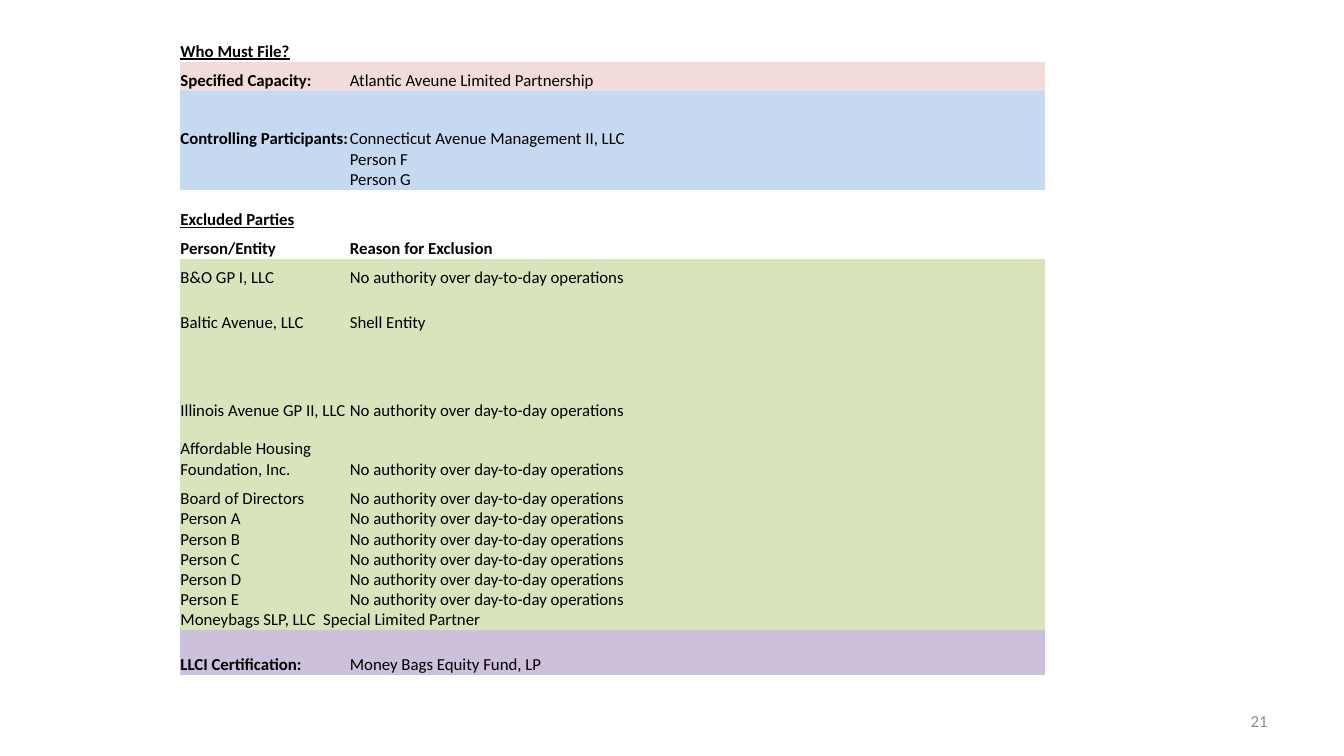
from lxml import etree
from pptx import Presentation
from pptx.dml.color import RGBColor
from pptx.enum.text import MSO_ANCHOR, PP_ALIGN
from pptx.util import Inches, Pt

BOTTOM = MSO_ANCHOR.BOTTOM
MIDDLE = MSO_ANCHOR.MIDDLE
RIGHT = PP_ALIGN.RIGHT
PLAIN_TABLE = "{2D5ABB26-0587-4C30-8999-92F81FD0307C}"

PINK, BLUE, GREEN, PURPLE = "F2DCDB", "C5D9F1", "D8E4BC", "CCC0DA"
NO_AUTHORITY = "No authority over day-to-day operations"
LINE, SINGLE, TALL, DOUBLE = 0.2, 0.29, 0.44, 0.58
HEADING, LABEL, NORMAL = "heading", "label", "normal"


def color(value):
    return RGBColor.from_string(value)


class FilingPage:
    """Holds the text style and the current slide, and draws its elements."""

    font = "Calibri"
    size = Pt(12)

    def __init__(self, deck):
        self.page = deck.slides.add_slide(deck.slide_layouts[6])

    def style(self, para, ink="000000", bold=False, underline=False):
        para.font.name = self.font
        para.font.size = self.size
        para.font.color.rgb = color(ink)
        para.font.bold = bold
        para.font.underline = underline

    def text(self, words, left, top, width, height, ink):
        box = self.page.shapes.add_textbox(
            Inches(left), Inches(top), Inches(width), Inches(height))
        box.text_frame.word_wrap = True
        box.text_frame.vertical_anchor = MIDDLE
        para = box.text_frame.paragraphs[0]
        para.text = words
        para.alignment = RIGHT
        self.style(para, ink)

    def cell(self, cell, words, fill, bold=False, underline=False):
        cell.margin_left = cell.margin_right = 0
        cell.margin_top = cell.margin_bottom = 0
        cell.vertical_anchor = BOTTOM
        if fill:
            cell.fill.solid()
            cell.fill.fore_color.rgb = color(fill)
        else:
            cell.fill.background()
        para = cell.text_frame.paragraphs[0]
        if words:
            para.text = words
        else:
            para._p.get_or_add_endParaRPr().set("sz", str(int(self.size.pt * 100)))
        self.style(para, bold=bold, underline=underline)

    def table(self, rows, left, top, widths):
        frame = self.page.shapes.add_table(
            len(rows), len(widths), Inches(left), Inches(top),
            Inches(sum(widths)), Inches(sum(row[0] for row in rows)))
        table = frame.table
        table.first_row = table.horz_banding = False
        properties = table._tbl.tblPr
        for child in list(properties):
            properties.remove(child)
        namespace = etree.QName(properties).namespace
        etree.SubElement(properties, f"{{{namespace}}}tableStyleId").text = PLAIN_TABLE
        for column, width in zip(table.columns, widths):
            column.width = Inches(width)
        for index, (height, fill, kind, name, detail, start, span) in enumerate(rows):
            table.rows[index].height = Inches(height)
            for column in range(len(widths)):
                words = (name, detail)[column] if column < 2 else ""
                bold = kind != NORMAL and (column == 0 or fill is None)
                self.cell(table.cell(index, column), words, fill, bold, kind == HEADING)
            if span > 1:
                table.cell(index, start).merge(table.cell(index, start + span - 1))


def main():
    deck = Presentation()
    deck.slide_width, deck.slide_height = Inches(13.33), Inches(7.5)
    filing = FilingPage(deck)
    filing.text("21", 9.56, 6.95, 3.11, 0.4, "8C8C8C")
    people = [(LINE, GREEN, NORMAL, f"Person {letter}", NO_AUTHORITY, 1, 4)
              for letter in "ABCDE"]
    rows = [
        (LINE, None, HEADING, "Who Must File?", "", 0, 3),
        (SINGLE, PINK, LABEL, "Specified Capacity:",
         "Atlantic Aveune Limited Partnership", 1, 4),
        (DOUBLE, BLUE, LABEL, "Controlling Participants:",
         "Connecticut Avenue Management II, LLC", 1, 4),
        (LINE, BLUE, NORMAL, "", "Person F", 1, 1),
        (LINE, BLUE, NORMAL, "", "Person G", 1, 1),
        (LINE, None, NORMAL, "", "", 0, 1),
        (LINE, None, HEADING, "Excluded Parties", "", 0, 3),
        (SINGLE, None, LABEL, "Person/Entity", "Reason for Exclusion", 1, 3),
        (SINGLE, GREEN, NORMAL, "B&O GP I, LLC", NO_AUTHORITY, 1, 4),
        (TALL, GREEN, NORMAL, "Baltic Avenue, LLC", "Shell Entity", 1, 3),
        (TALL, GREEN, NORMAL, "", "", 1, 2),
        (TALL, GREEN, NORMAL, "Illinois Avenue GP II, LLC", NO_AUTHORITY, 1, 4),
        (DOUBLE, GREEN, NORMAL, "Affordable Housing Foundation, Inc.", NO_AUTHORITY, 1, 4),
        (SINGLE, GREEN, NORMAL, "Board of Directors", NO_AUTHORITY, 1, 4),
        *people,
        (LINE, GREEN, NORMAL, "Moneybags SLP, LLC  Special Limited Partner", "", 0, 5),
        (TALL, PURPLE, LABEL, "LLCI Certification:", "Money Bags Equity Fund, LP", 1, 3),
    ]
    filing.table(rows, 1.79, 0.41, [1.68] + [6.9 / 4] * 4)
    deck.save("out.pptx")


if __name__ == "__main__":
    main()
